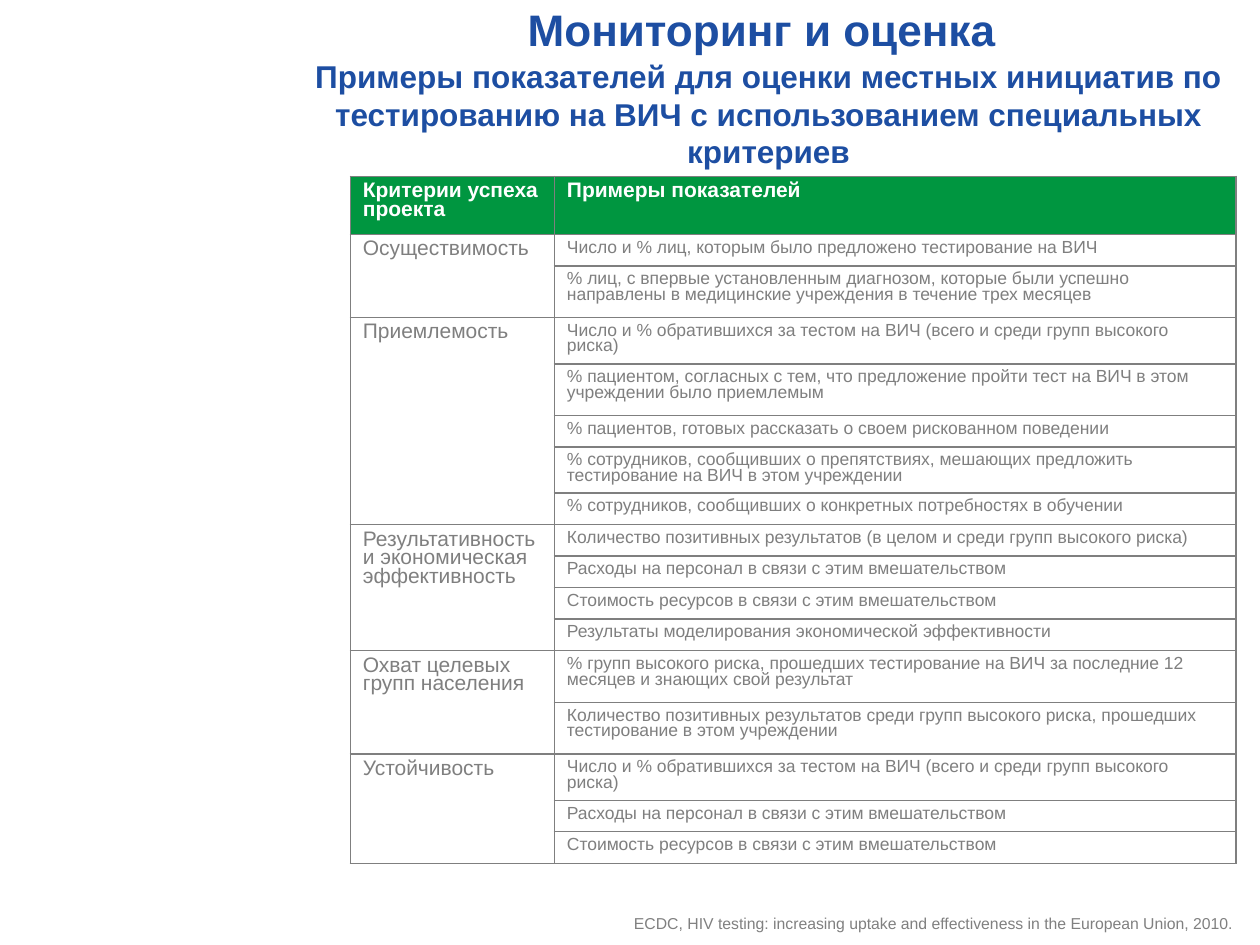
import pptx
import pptx.dml.color
import pptx.enum.text
import pptx.oxml.ns
import pptx.util
import lxml.etree

PX = 9144  # EMU per px, 100 px to the inch
THEME = {
    "font": "Arial",
    "blue": "1D4EA2", "green": "009640", "grey": "7F7F7F",
    "source_grey": "808080", "white": "FFFFFF",
    "title": 25.2, "title_break": 28.8, "subtitle": 18,
    "criterion": 12, "indicator": 10, "source": 9,
}
ALIGN = pptx.enum.text.PP_ALIGN


def add_run(paragraph, text, size, color, bold=False):
    run = paragraph.add_run()
    run.text = text
    run.font.name = THEME["font"]
    run.font.size = pptx.util.Pt(THEME[size])
    run.font.bold = bold
    run.font.color.rgb = pptx.dml.color.RGBColor.from_string(THEME[color])


def fill_cell(cell, text, size, color="grey", fill="white", bold=False):
    # Borders go before the fill in the cell properties
    props = cell._tc.get_or_add_tcPr()
    for side in ("a:lnL", "a:lnR", "a:lnT", "a:lnB"):
        line = lxml.etree.SubElement(props, pptx.oxml.ns.qn(side), w="12700")
        solid = lxml.etree.SubElement(line, pptx.oxml.ns.qn("a:solidFill"))
        lxml.etree.SubElement(solid, pptx.oxml.ns.qn("a:srgbClr"), val=THEME["grey"])
    cell.fill.solid()
    cell.fill.fore_color.rgb = pptx.dml.color.RGBColor.from_string(THEME[fill])
    paragraph = cell.text_frame.paragraphs[0]
    paragraph.line_spacing = 0.8
    if text:
        add_run(paragraph, text, size, color, bold)


prs = pptx.Presentation()
prs.slide_width, prs.slide_height = 1000 * PX, 750 * PX
slide = prs.slides.add_slide(prs.slide_layouts[6])

# Title and subtitle
heading = slide.shapes.add_textbox(236 * PX, 22 * PX, 748 * PX, 118 * PX).text_frame
heading.word_wrap = True
heading.vertical_anchor = pptx.enum.text.MSO_ANCHOR.BOTTOM
heading_line = heading.paragraphs[0]
heading_line.alignment = ALIGN.CENTER
add_run(heading_line, "Мониторинг и оценка", "title", "blue", True)
add_run(heading_line, " ", "title_break", "blue", True)
heading_line.add_line_break()
add_run(heading_line, "Примеры показателей для оценки местных инициатив по тестированию "
        "на ВИЧ с использованием специальных критериев", "subtitle", "blue", True)

# Criteria, each with its indicators and their row heights
TESTED = "Число и % обратившихся за тестом на ВИЧ (всего и среди групп высокого риска)"
STAFF_COST = "Расходы на персонал в связи с этим вмешательством"
RESOURCE_COST = "Стоимость ресурсов в связи с этим вмешательством"
ONE_LINE, TWO_LINES, TALL, HEADER = 25, 34, 41, 46
criteria = [
    ("Осуществимость", [
        ("Число и % лиц, которым было предложено тестирование на ВИЧ", ONE_LINE),
        ("% лиц, с впервые установленным диагнозом, которые были успешно направлены "
         "в медицинские учреждения в течение трех месяцев", TALL),
    ]),
    ("Приемлемость", [
        (TESTED, TWO_LINES),
        ("% пациентом, согласных с тем, что предложение пройти тест на ВИЧ в этом "
         "учреждении было приемлемым", TALL),
        ("% пациентов, готовых рассказать о своем рискованном поведении", ONE_LINE),
        ("% сотрудников, сообщивших о препятствиях, мешающих предложить тестирование "
         "на ВИЧ в этом учреждении", TWO_LINES),
        ("% сотрудников, сообщивших о конкретных потребностях в обучении", ONE_LINE),
    ]),
    ("Результативность и экономическая эффективность", [
        ("Количество позитивных результатов (в целом и среди групп высокого риска)",
         ONE_LINE),
        (STAFF_COST, ONE_LINE),
        (RESOURCE_COST, ONE_LINE),
        ("Результаты моделирования экономической эффективности", ONE_LINE),
    ]),
    ("Охват целевых групп населения", [
        ("% групп высокого риска, прошедших тестирование на ВИЧ за последние "
         "12 месяцев и знающих свой результат", TALL),
        ("Количество позитивных результатов среди групп высокого риска, прошедших "
         "тестирование в этом учреждении", TALL),
    ]),
    ("Устойчивость", [
        (TESTED, TWO_LINES),
        (STAFF_COST, ONE_LINE),
        (RESOURCE_COST, ONE_LINE),
    ]),
]
heights = [HEADER] + [height for _, group in criteria for _, height in group]

# Table
indicators = slide.shapes.add_table(
    len(heights), 2, 278 * PX, 140 * PX, 703 * PX, sum(heights) * PX).table
for column, width in zip(indicators.columns, (162, 541)):
    column.width = width * PX
for row, height in zip(indicators.rows, heights):
    row.height = height * PX

for column, label in enumerate(("Критерии успеха проекта", "Примеры показателей")):
    fill_cell(indicators.cell(0, column), label, "criterion", "white", "green", True)

top = 1
for criterion, group in criteria:
    for offset, (indicator, _) in enumerate(group):
        fill_cell(indicators.cell(top + offset, 0),
                  "" if offset else criterion, "criterion")
        fill_cell(indicators.cell(top + offset, 1), indicator, "indicator")
    bottom = top + len(group) - 1
    indicators.cell(top, 0).merge(indicators.cell(bottom, 0))
    top = bottom + 1

# Source line
source = slide.shapes.add_textbox(387 * PX, 720 * PX, 601 * PX, 25 * PX).text_frame
source.word_wrap = True
source.auto_size = pptx.enum.text.MSO_AUTO_SIZE.SHAPE_TO_FIT_TEXT
citation = source.paragraphs[0]
citation.alignment = ALIGN.RIGHT
add_run(citation, "ECDC, HIV testing: increasing uptake and effectiveness in the "
        "European Union, 2010.", "source", "source_grey")

prs.save("out.pptx")
